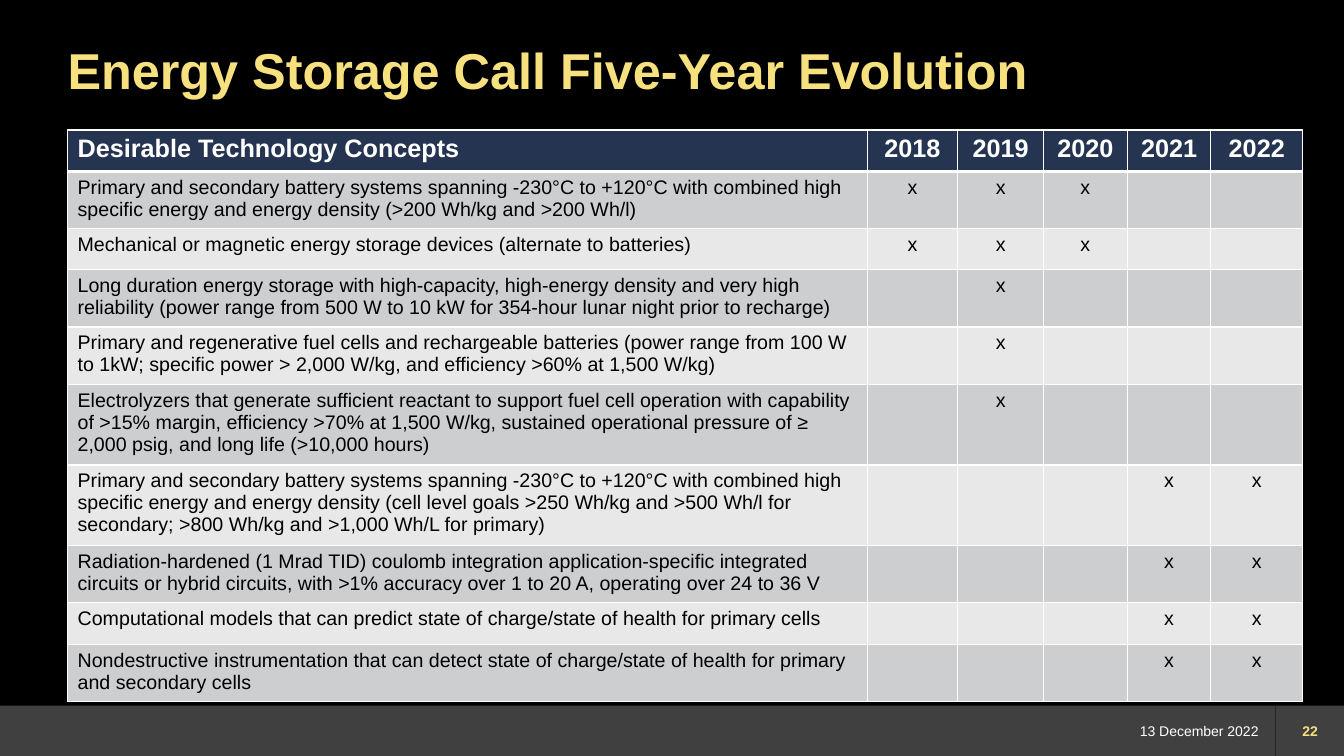
from lxml.etree import SubElement
from pptx import Presentation
from pptx.dml.color import RGBColor
from pptx.enum.shapes import MSO_CONNECTOR, MSO_SHAPE
from pptx.enum.text import MSO_ANCHOR, PP_ALIGN
from pptx.oxml.ns import qn
from pptx.util import Inches, Pt

BLACK = RGBColor(0x00, 0x00, 0x00)
WHITE = RGBColor(0xFF, 0xFF, 0xFF)
YELLOW = RGBColor(0xF7, 0xE1, 0x7F)
NAVY = RGBColor(0x24, 0x34, 0x51)
DARK_BAND = RGBColor(0xCD, 0xCE, 0xD0)
LIGHT_BAND = RGBColor(0xE8, 0xE8, 0xE9)
FOOTER_GREY = RGBColor(0x40, 0x40, 0x40)
DIVIDER_GREY = RGBColor(0x26, 0x26, 0x26)

YEARS = ["2018", "2019", "2020", "2021", "2022"]
COLUMN_WIDTHS = [7.93, 0.9, 0.85, 0.83, 0.83, 0.91]
ROW_HEIGHT = 0.41

# Each concept with the years whose call asked for it
CONCEPTS = [
    ("Primary and secondary battery systems spanning -230°C to +120°C with combined high "
     "specific energy and energy density (>200 Wh/kg and >200 Wh/l)",
     ["2018", "2019", "2020"]),
    ("Mechanical or magnetic energy storage devices (alternate to batteries)",
     ["2018", "2019", "2020"]),
    ("Long duration energy storage with high-capacity, high-energy density and very high "
     "reliability (power range from 500 W to 10 kW for 354-hour lunar night prior to recharge)",
     ["2019"]),
    ("Primary and regenerative fuel cells and rechargeable batteries (power range from 100 W "
     "to 1kW; specific power > 2,000 W/kg, and efficiency >60% at 1,500 W/kg)",
     ["2019"]),
    ("Electrolyzers that generate sufficient reactant to support fuel cell operation with "
     "capability of >15% margin, efficiency >70% at 1,500 W/kg, sustained operational pressure "
     "of ≥ 2,000 psig, and long life (>10,000 hours)",
     ["2019"]),
    ("Primary and secondary battery systems spanning -230°C to +120°C with combined high "
     "specific energy and energy density (cell level goals >250 Wh/kg and >500 Wh/l for "
     "secondary; >800 Wh/kg and >1,000 Wh/L for primary)",
     ["2021", "2022"]),
    ("Radiation-hardened (1 Mrad TID) coulomb integration application-specific integrated "
     "circuits or hybrid circuits, with >1% accuracy over 1 to 20 A, operating over 24 to 36 V",
     ["2021", "2022"]),
    ("Computational models that can predict state of charge/state of health for primary cells",
     ["2021", "2022"]),
    ("Nondestructive instrumentation that can detect state of charge/state of health for "
     "primary and secondary cells",
     ["2021", "2022"]),
]


def write_text(text_frame, text, size, color, bold=False, align=PP_ALIGN.LEFT, line_spacing=None):
    paragraph = text_frame.paragraphs[0]
    paragraph.alignment = align
    paragraph.line_spacing = line_spacing
    run = paragraph.add_run()
    run.text = text
    run.font.name = "Arial"
    run.font.size = Pt(size)
    run.font.bold = bold
    run.font.color.rgb = color


def add_label(slide, left, top, width, height, text, side_inset=0, anchor=MSO_ANCHOR.MIDDLE,
              **text_format):
    text_frame = slide.shapes.add_textbox(
        Inches(left), Inches(top), Inches(width), Inches(height)).text_frame
    text_frame.word_wrap = True
    text_frame.vertical_anchor = anchor
    text_frame.margin_left = text_frame.margin_right = Inches(side_inset)
    text_frame.margin_top = text_frame.margin_bottom = 0
    write_text(text_frame, text, **text_format)


def style_cell(cell, fill_color, bottom_width=1):
    cell_properties = cell._tc.get_or_add_tcPr()
    for side, width in (("L", 1), ("R", 1), ("T", 1), ("B", bottom_width)):
        border = SubElement(cell_properties, qn(f"a:ln{side}"), w=str(Pt(width)))
        border_fill = SubElement(border, qn("a:solidFill"))
        SubElement(border_fill, qn("a:srgbClr"), val=str(WHITE))
    cell.fill.solid()
    cell.fill.fore_color.rgb = fill_color


def add_concept_table(slide):
    row_count = len(CONCEPTS) + 1
    table = slide.shapes.add_table(
        row_count, len(COLUMN_WIDTHS), Inches(0.67), Inches(1.29),
        Inches(sum(COLUMN_WIDTHS)), Inches(ROW_HEIGHT * row_count)).table
    for column, width in zip(table.columns, COLUMN_WIDTHS):
        column.width = Inches(width)
    for row in table.rows:
        row.height = Inches(ROW_HEIGHT)

    # Header row
    for index, heading in enumerate(["Desirable Technology Concepts"] + YEARS):
        cell = table.cell(0, index)
        style_cell(cell, NAVY, bottom_width=3)
        write_text(cell.text_frame, heading, size=18, color=WHITE, bold=True,
                   align=PP_ALIGN.CENTER if index else PP_ALIGN.LEFT)

    # Concept rows in alternating bands
    for row_index, (concept, call_years) in enumerate(CONCEPTS, start=1):
        marks = ["x" if year in call_years else "" for year in YEARS]
        for index, text in enumerate([concept] + marks):
            cell = table.cell(row_index, index)
            style_cell(cell, DARK_BAND if row_index % 2 else LIGHT_BAND)
            if text:
                write_text(cell.text_frame, text, size=14, color=BLACK,
                           align=PP_ALIGN.CENTER if index else PP_ALIGN.LEFT)


def add_footer(slide):
    bar = slide.shapes.add_shape(
        MSO_SHAPE.RECTANGLE, 0, Inches(7), Inches(13.33), Inches(0.5))
    bar.shadow.inherit = False
    bar.fill.solid()
    bar.fill.fore_color.rgb = FOOTER_GREY
    bar.line.fill.background()

    divider = slide.shapes.add_connector(
        MSO_CONNECTOR.STRAIGHT, Inches(12.65), Inches(7), Inches(12.65), Inches(7.5))
    divider.line.color.rgb = DIVIDER_GREY
    divider.line.width = Pt(1)
    SubElement(divider._element.spPr, qn("a:effectLst"))

    add_label(slide, 11.08, 7, 1.5, 0.5, "13 December 2022", side_inset=0.1,
              size=10, color=WHITE, align=PP_ALIGN.RIGHT)
    add_label(slide, 12.73, 7, 0.53, 0.5, "22",
              size=10, color=YELLOW, bold=True, align=PP_ALIGN.CENTER)


def main():
    presentation = Presentation()
    presentation.slide_width = Inches(13.33)
    presentation.slide_height = Inches(7.5)
    slide = presentation.slides.add_slide(presentation.slide_layouts[6])
    slide.background.fill.solid()
    slide.background.fill.fore_color.rgb = BLACK

    add_footer(slide)
    add_label(slide, 0.67, 0.46, 12, 0.83, "Energy Storage Call Five-Year Evolution",
              anchor=MSO_ANCHOR.TOP, size=36, color=YELLOW, bold=True, line_spacing=0.9)
    add_concept_table(slide)
    presentation.save("out.pptx")


if __name__ == "__main__":
    main()
